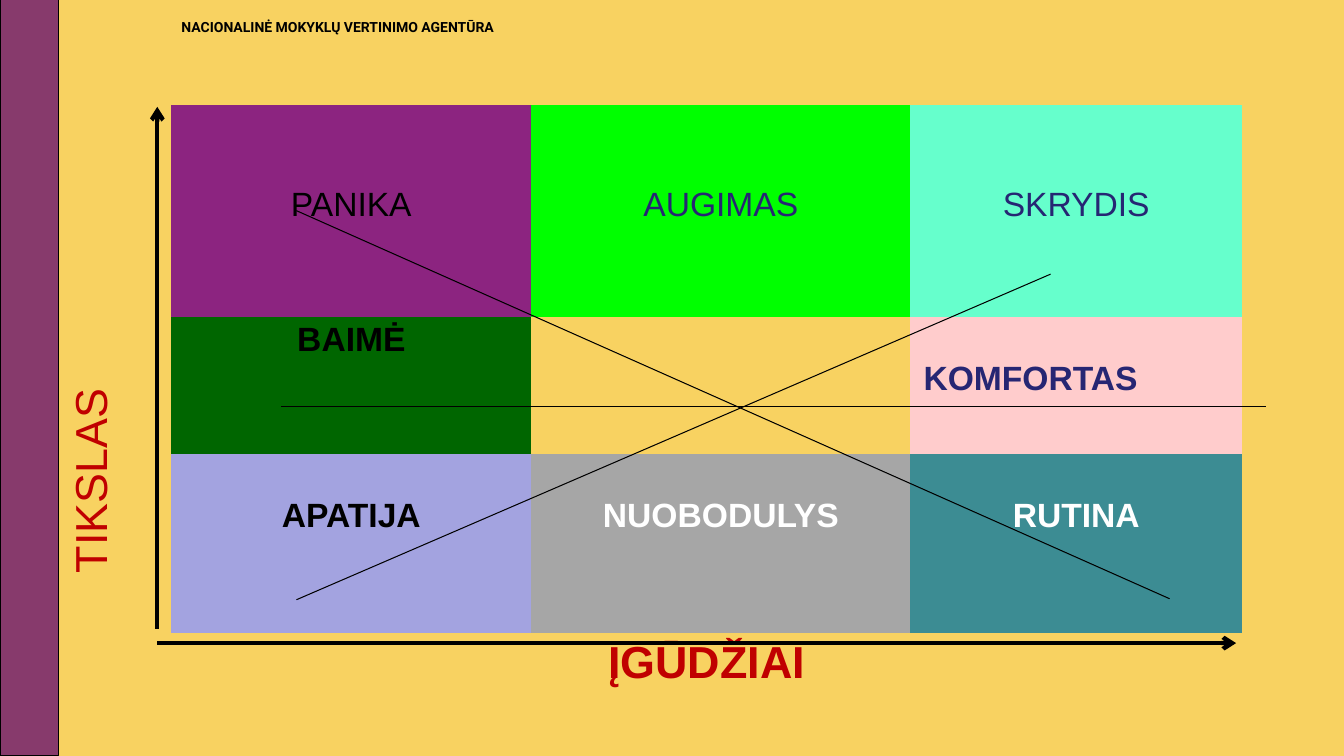
from lxml.etree import SubElement
from pptx import Presentation
from pptx.dml.color import RGBColor
from pptx.enum.shapes import MSO_CONNECTOR, MSO_SHAPE
from pptx.enum.text import MSO_ANCHOR, PP_ALIGN
from pptx.oxml.ns import qn
from pptx.util import Inches, Pt

BACKGROUND = RGBColor(0xF8, 0xD2, 0x61)
PLUM = RGBColor(0x87, 0x3A, 0x6C)
BLACK = RGBColor(0, 0, 0)
WHITE = RGBColor(0xFF, 0xFF, 0xFF)
RED = RGBColor(0xC0, 0, 0)
NAVY = RGBColor(0x26, 0x26, 0x73)
PURPLE = RGBColor(0x8C, 0x24, 0x80)
LIME = RGBColor(0, 0xFF, 0)
AQUA = RGBColor(0x66, 0xFF, 0xCC)
GREEN = RGBColor(0, 0x66, 0)
PINK = RGBColor(0xFF, 0xCC, 0xCC)
LAVENDER = RGBColor(0xA3, 0xA3, 0xE0)
GREY = RGBColor(0xA6, 0xA6, 0xA6)
TEAL = RGBColor(0x3C, 0x8C, 0x93)

SLIDE_WIDTH, SLIDE_HEIGHT = 13.33, 7.5
COLUMN_WIDTHS = (1.38, 3.57, 3.76, 3.29)
ROW_HEIGHTS = (2.1, 1.36, 1.78, 0.67)
LINE_HEIGHT = 0.38
NO_STYLE = "{2D5ABB26-0587-4C30-8999-92F81FD0307C}"

STATES = (
    (0, 1, "PANIKA", PURPLE, BLACK, False, 2),
    (0, 2, "AUGIMAS", LIME, NAVY, False, 2),
    (0, 3, "SKRYDIS", AQUA, NAVY, False, 2),
    (1, 1, "BAIMĖ", GREEN, BLACK, True, 0),
    (1, 3, "KOMFORTAS", PINK, NAVY, True, 1),
    (2, 1, "APATIJA", LAVENDER, BLACK, True, 1),
    (2, 2, "NUOBODULYS", GREY, WHITE, True, 1),
    (2, 3, "RUTINA", TEAL, WHITE, True, 1),
)
CROSS_LINES = (
    (2.62, 4.91, 10.1, 1.68),
    (2.47, 2.99, 12.24, 2.99),
    (2.62, 1.05, 11.28, 4.9),
)
AXES = ((1.24, 5.2, 1.24, 0.02), (1.24, 5.34, 11.94, 5.34))


def format_text(paragraph, font_name, size, color, bold):
    """Format every run of a paragraph."""
    for run in paragraph.runs:
        run.font.name = font_name
        run.font.size = Pt(size)
        run.font.color.rgb = color
        run.font.bold = bold


def fill_cell(cell, text, size, color, bold, alignment=PP_ALIGN.CENTER):
    """Write one formatted paragraph into a cell."""
    cell.text_frame.text = text
    paragraph = cell.text_frame.paragraphs[0]
    paragraph.alignment = alignment
    format_text(paragraph, "Arial", size, color, bold)


def add_side_band(slide, left, top, width, height):
    """Draw the coloured band along the slide edge."""
    band = slide.shapes.add_shape(
        MSO_SHAPE.RECTANGLE, *map(Inches, (left, top, width, height)))
    band.shadow.inherit = False
    band.fill.solid()
    band.fill.fore_color.rgb = PLUM
    band.line.color.rgb = BLACK
    band.line.width = Pt(0.75)


def add_heading(slide, left, top, width, height):
    """Place the agency name in the title placeholder."""
    title = slide.shapes.title
    title.left, title.top, title.width, title.height = map(
        Inches, (left, top, width, height))
    text_frame = title.text_frame
    text_frame.text = "NACIONALINĖ MOKYKLŲ VERTINIMO AGENTŪRA"
    text_frame.vertical_anchor = MSO_ANCHOR.TOP
    paragraph = text_frame.paragraphs[0]
    paragraph.alignment = PP_ALIGN.LEFT
    format_text(paragraph, "Roboto", 10, BLACK, True)


def add_matrix(slide, left, top):
    """Build the table of states with its two axis names."""
    frame = slide.shapes.add_table(
        len(ROW_HEIGHTS), len(COLUMN_WIDTHS), Inches(left), Inches(top),
        Inches(sum(COLUMN_WIDTHS)), Inches(sum(ROW_HEIGHTS)))
    table = frame.table
    table.first_row = table.horz_banding = False
    table._tbl.tblPr.find(qn("a:tableStyleId")).text = NO_STYLE
    for column, width in zip(table.columns, COLUMN_WIDTHS):
        column.width = Inches(width)
    for row, height in zip(table.rows, ROW_HEIGHTS):
        row.height = Inches(height)
    for cell in table.iter_cells():
        cell.fill.background()
        cell.margin_left = cell.margin_right = Inches(0.13)

    for row, column, text, fill, color, bold, lines_above in STATES:
        cell = table.cell(row, column)
        cell.fill.solid()
        cell.fill.fore_color.rgb = fill
        cell.margin_top = Inches(0.05 + lines_above * LINE_HEIGHT)
        alignment = PP_ALIGN.LEFT if text == "KOMFORTAS" else PP_ALIGN.CENTER
        fill_cell(cell, text, 24, color, bold, alignment)

    goal = table.cell(0, 0)
    goal.merge(table.cell(3, 0))
    goal._tc.get_or_add_tcPr().set("vert", "vert270")
    goal.margin_top = Inches(0.34)
    fill_cell(goal, "TIKSLAS", 32, RED, False)

    skills = table.cell(3, 1)
    skills.merge(table.cell(3, 3))
    fill_cell(skills, "ĮGŪDŽIAI", 32, RED, True)


def add_lines(slide, left, top, lines, width, arrow=False):
    """Draw black lines measured from the corner of the matrix."""
    for start_x, start_y, end_x, end_y in lines:
        connector = slide.shapes.add_connector(
            MSO_CONNECTOR.STRAIGHT, Inches(left + start_x),
            Inches(top + start_y), Inches(left + end_x), Inches(top + end_y))
        connector.line.color.rgb = BLACK
        connector.line.width = Pt(width)
        if arrow:
            SubElement(connector.line._get_or_add_ln(), qn("a:tailEnd"),
                       type="arrow")
        SubElement(connector._element.spPr, qn("a:effectLst"))


def main():
    """Build the slide and save the presentation."""
    presentation = Presentation()
    presentation.slide_width = Inches(SLIDE_WIDTH)
    presentation.slide_height = Inches(SLIDE_HEIGHT)
    slide = presentation.slides.add_slide(presentation.slide_layouts[5])
    slide.background.fill.solid()
    slide.background.fill.fore_color.rgb = BACKGROUND
    matrix_corner = (0.32, 1.04)
    add_side_band(slide, 0, 0, 0.58, SLIDE_HEIGHT)
    add_heading(slide, 1.7, 0.13, 9.16, 0.27)
    add_matrix(slide, *matrix_corner)
    add_lines(slide, *matrix_corner, CROSS_LINES, 0.75)
    add_lines(slide, *matrix_corner, AXES, 3, arrow=True)
    presentation.save("out.pptx")


if __name__ == "__main__":
    main()
